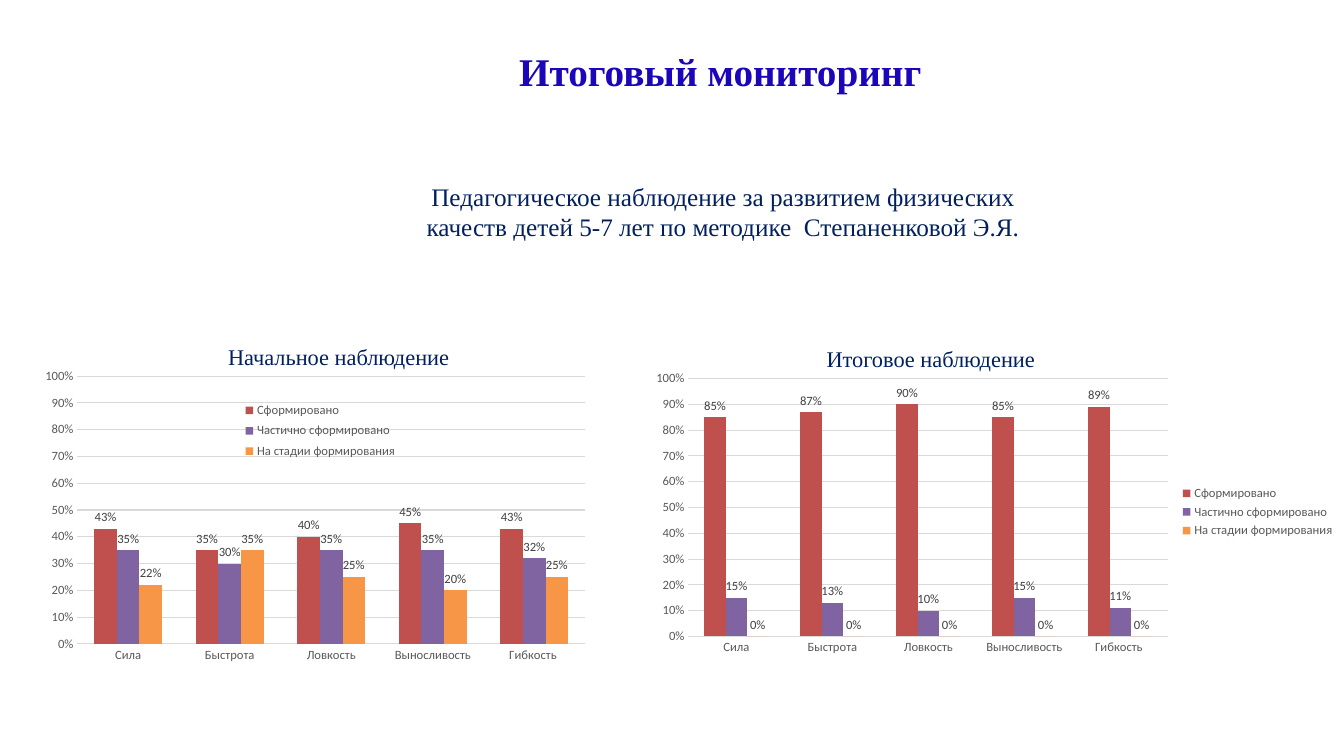
from lxml import etree
from pptx import Presentation
from pptx import util as u
from pptx.chart import data as chart_data
from pptx.dml import color
from pptx.enum import chart as chart_enum
from pptx.enum import text
from pptx.oxml import ns

COLUMNS, ROWS = 40, 22.5
SERIF, SANS = "Times New Roman", "Calibri"
NAVY, VIOLET = "002060", "1B06BA"
GREY, DARK, GRID = "595959", "404040", "D9D9D9"

QUALITIES = ["Сила", "Быстрота", "Ловкость", "Выносливость", "Гибкость "]
LEVELS = {
    "Сформировано": "C0504D",
    "Частично сформировано": "8064A2",
    "На стадии формирования": "F79646",
}
INITIAL = [
    [0.43, 0.35, 0.4, 0.45, 0.43],
    [0.35, 0.3, 0.35, 0.35, 0.32],
    [0.22, 0.35, 0.25, 0.2, 0.25],
]
FINAL = [
    [0.85, 0.87, 0.9, 0.85, 0.89],
    [0.15, 0.13, 0.1, 0.15, 0.11],
    [0, 0, 0, 0, 0],
]


def rgb(value):
    return color.RGBColor.from_string(value)


def assign(target, values):
    for name, value in values.items():
        setattr(target, name, value)


def set_font(font, size, tint, name=SANS, bold=False):
    assign(font, {"size": u.Pt(size), "name": name, "bold": bold})
    font.color.rgb = rgb(tint)


def place(element, index, area, inner=False):
    """Fix a chart part at x, y, width, height, as shares of the chart."""
    for old in element.findall(ns.qn("c:layout")):
        element.remove(old)
    layout = etree.Element(ns.qn("c:layout"))
    manual = etree.SubElement(layout, ns.qn("c:manualLayout"))
    entries = [("layoutTarget", "inner")] if inner else []
    entries += [("xMode", "edge"), ("yMode", "edge"), *zip("xywh", area)]
    for tag, value in entries:
        etree.SubElement(manual, ns.qn(f"c:{tag}")).set("val", str(value))
    element.insert(index, layout)


class Slide:
    def __init__(self, deck):
        self.deck = deck
        self.page = deck.slides.add_slide(deck.slide_layouts[6])

    def frame(self, left, top, width, height):
        column = self.deck.slide_width / COLUMNS
        row = self.deck.slide_height / ROWS
        return [u.Emu(round(n)) for n in
                (left * column, top * row, width * column, height * row)]

    def label(self, area, lines, size, tint=NAVY, bold=False):
        box = self.page.shapes.add_textbox(*self.frame(*area)).text_frame
        assign(box, {"word_wrap": True,
                     "auto_size": text.MSO_AUTO_SIZE.SHAPE_TO_FIT_TEXT})
        for number, line in enumerate(lines):
            para = box.add_paragraph() if number else box.paragraphs[0]
            para.alignment = text.PP_ALIGN.CENTER
            span = para.add_run()
            span.text = line
            set_font(span.font, size, tint, SERIF, bold)

    def bars(self, area, values, plot_area, legend_area=None):
        source = chart_data.CategoryChartData(number_format="0%")
        source.categories = QUALITIES
        for level, row in zip(LEVELS, values):
            source.add_series(level, row)
        chart = self.page.shapes.add_chart(
            chart_enum.XL_CHART_TYPE.COLUMN_CLUSTERED,
            *self.frame(*area), source).chart
        assign(chart, {"has_title": False, "has_legend": True})
        set_font(chart.font, 10, "000000")

        # Legend and plot area
        assign(chart.legend, {
            "position": chart_enum.XL_LEGEND_POSITION.RIGHT,
            "include_in_layout": False})
        set_font(chart.legend.font, 9, GREY)
        place(chart._chartSpace.chart.plotArea, 0, plot_area, inner=True)
        if legend_area:
            place(chart.legend._element, 1, legend_area)

        # Axes
        for axis in (chart.category_axis, chart.value_axis):
            assign(axis, {
                "major_tick_mark": chart_enum.XL_TICK_MARK.NONE,
                "minor_tick_mark": chart_enum.XL_TICK_MARK.NONE})
            axis.format.line.fill.background()
            set_font(axis.tick_labels.font, 9, GREY)
        assign(chart.value_axis, {
            "minimum_scale": 0, "maximum_scale": 1, "major_unit": 0.1,
            "has_major_gridlines": True})
        assign(chart.value_axis.tick_labels, {
            "number_format": "0%", "number_format_is_linked": False})
        grid = chart.value_axis.major_gridlines.format.line
        grid.color.rgb = rgb(GRID)
        grid.width = u.Pt(0.75)

        # Columns and their labels
        plot = chart.plots[0]
        assign(plot, {"gap_width": 150, "overlap": 0,
                      "vary_by_categories": False})
        for series, tint in zip(plot.series, LEVELS.values()):
            series.format.fill.solid()
            series.format.fill.fore_color.rgb = rgb(tint)
            labels = series.data_labels
            assign(labels, {
                "show_value": True, "number_format": "0%",
                "number_format_is_linked": False,
                "position": chart_enum.XL_LABEL_POSITION.OUTSIDE_END})
            set_font(labels.font, 9, DARK)


def main():
    deck = Presentation()
    assign(deck, {"slide_width": u.Inches(13.33),
                  "slide_height": u.Inches(7.5)})
    slide = Slide(deck)

    # Charts
    slide.bars((19.02, 10.83, 21, 8.82), FINAL, (0.07, 0.05, 0.68, 0.87))
    slide.bars((0.99, 10.74, 21.9, 9.06), INITIAL, (0.06, 0.05, 0.69, 0.88),
               legend_area=(0.28, 0.12, 0.22, 0.22))

    # Heading and subject
    slide.label((6.24, 1.26, 30.39, 1.71), ["Итоговый мониторинг"],
                28, VIOLET, bold=True)
    slide.label((11.46, 5.25, 20.31, 2.13), [
        "Педагогическое наблюдение за развитием физических ",
        "качеств детей 5-7 лет по методике  Степаненковой Э.Я. "], 18)

    # Chart captions
    slide.label((6.3, 10.08, 7.56, 1.11), ["Начальное наблюдение"], 16)
    slide.label((24.15, 10.14, 7.11, 1.11), ["Итоговое наблюдение"], 16)

    deck.save("out.pptx")


if __name__ == "__main__":
    main()
